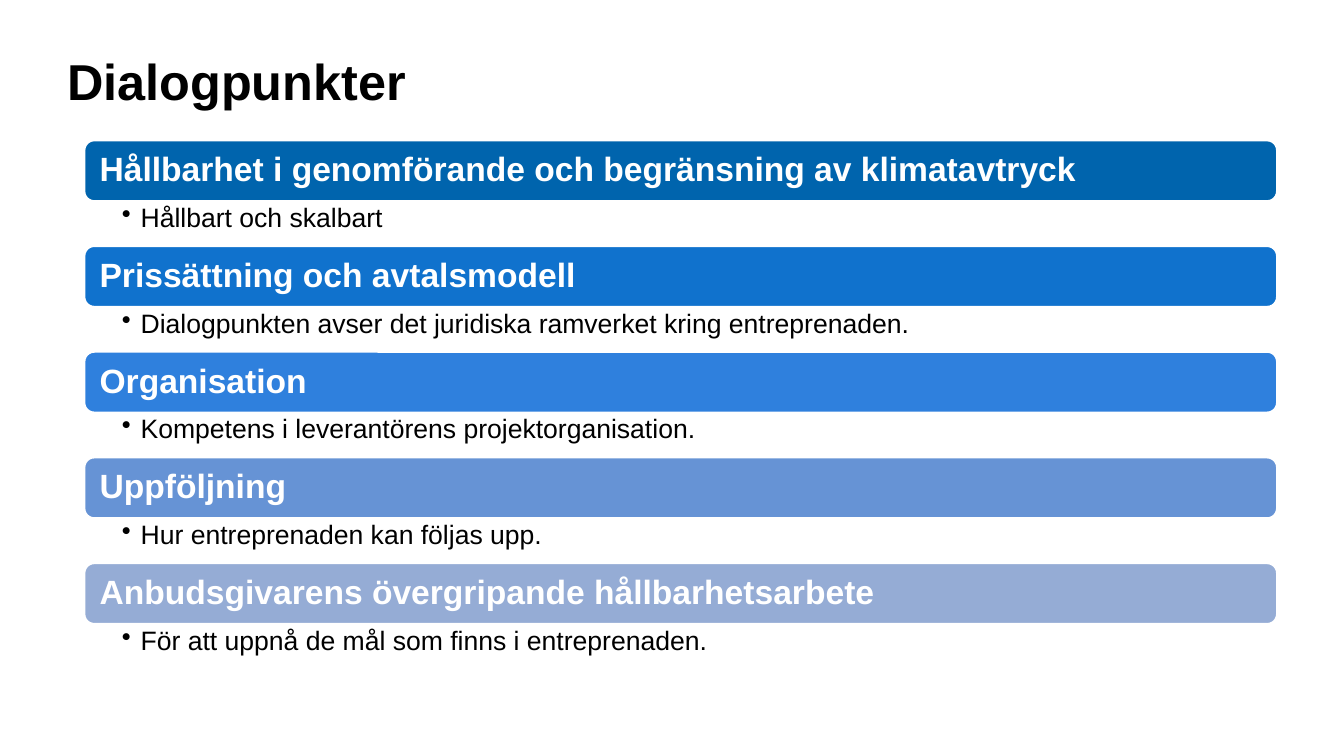
from lxml import etree
from pptx import Presentation
from pptx.dml.color import RGBColor
from pptx.enum.shapes import MSO_SHAPE
from pptx.enum.text import MSO_ANCHOR, MSO_AUTO_SIZE, PP_ALIGN
from pptx.oxml.ns import qn
from pptx.util import Pt

PX = 6350
SLIDE_WIDTH, SLIDE_HEIGHT = 1920, 1080
TITLE_BOX = (96, 72, 1728, 131)
TOPICS_BOX = (120, 200, 1705, 755)
BAR_HEIGHT = 88

ROUNDED = MSO_SHAPE.ROUNDED_RECTANGLE
TOP, MIDDLE = MSO_ANCHOR.TOP, MSO_ANCHOR.MIDDLE
LEFT = PP_ALIGN.LEFT
NO_AUTOFIT = MSO_AUTO_SIZE.NONE

BLACK = RGBColor(0x00, 0x00, 0x00)
WHITE = RGBColor(0xFF, 0xFF, 0xFF)
DEEP_BLUE = RGBColor(0x00, 0x64, 0xAD)
STRONG_BLUE = RGBColor(0x10, 0x72, 0xCD)
BRIGHT_BLUE = RGBColor(0x2F, 0x80, 0xDD)
SOFT_BLUE = RGBColor(0x66, 0x93, 0xD5)
PALE_BLUE = RGBColor(0x95, 0xAC, 0xD5)

TITLE_FONT = {"name": "Arial", "size": Pt(36), "bold": True}
HEADING_FONT = {"name": "Arial", "size": Pt(24), "bold": True}
POINT_FONT = {"name": "Arial", "size": Pt(19), "bold": False}

TOPICS = [
    ("Hållbarhet i genomförande och begränsning av klimatavtryck",
     "Hållbart och skalbart", DEEP_BLUE),
    ("Prissättning och avtalsmodell",
     "Dialogpunkten avser det juridiska ramverket kring entreprenaden.", STRONG_BLUE),
    ("Organisation",
     "Kompetens i leverantörens projektorganisation.", BRIGHT_BLUE),
    ("Uppföljning",
     "Hur entreprenaden kan följas upp.", SOFT_BLUE),
    ("Anbudsgivarens övergripande hållbarhetsarbete",
     "För att uppnå de mål som finns i entreprenaden.", PALE_BLUE),
]


def to_emu(box):
    """Turn px lengths into EMU."""
    return [length * PX for length in box]


def write_text(shape, text, font, color, margins, anchor, spacing=1.0, bullet_indent=0):
    """Write one formatted paragraph, bulleted when an indent is given."""
    frame = shape.text_frame
    left, top, right, bottom = to_emu(margins)
    frame_format = {"word_wrap": True, "auto_size": NO_AUTOFIT, "vertical_anchor": anchor,
                    "margin_left": left, "margin_top": top,
                    "margin_right": right, "margin_bottom": bottom}
    for name, value in frame_format.items():
        setattr(frame, name, value)
    frame.text = text
    paragraph = frame.paragraphs[0]
    paragraph.alignment = LEFT
    paragraph.line_spacing = spacing
    if bullet_indent:
        properties = paragraph._p.get_or_add_pPr()
        properties.set("marL", str(bullet_indent * PX))
        properties.set("indent", str(-bullet_indent * PX))
        etree.SubElement(properties, qn("a:buChar")).set("char", "•")
    run_font = paragraph.runs[0].font
    for name, value in font.items():
        setattr(run_font, name, value)
    run_font.color.rgb = color


def add_title(slide, box):
    """Place the slide title in its placeholder."""
    title = slide.shapes.title
    title.left, title.top, title.width, title.height = to_emu(box)
    write_text(title, "Dialogpunkter", TITLE_FONT, BLACK, (0, 0, 0, 0), TOP)


def add_topic(slide, box, heading, point, color):
    """Place a coloured heading bar with its bullet point below."""
    left, top, width, height = box
    bar = slide.shapes.add_shape(ROUNDED, *to_emu((left, top, width, BAR_HEIGHT)))
    bar.shadow.inherit = False
    bar.fill.solid()
    bar.fill.fore_color.rgb = color
    bar.line.color.rgb = WHITE
    bar.line.width = Pt(2)
    write_text(bar, heading, HEADING_FONT, WHITE, (18, 14, 18, 14), MIDDLE, 0.9)
    point_box = (left, top + BAR_HEIGHT, width, height - BAR_HEIGHT)
    caption = slide.shapes.add_textbox(*to_emu(point_box))
    write_text(caption, point, POINT_FONT, BLACK, (54, 4, 27, 4), TOP, 0.9, 27)


def add_topics(slide, box):
    """Stack the topics evenly in the box."""
    left, top, width, height = box
    pitch = height // len(TOPICS)
    for row, (heading, point, color) in enumerate(TOPICS):
        add_topic(slide, (left, top + row * pitch, width, pitch), heading, point, color)


def main():
    """Build and save the slide."""
    presentation = Presentation()
    presentation.slide_width, presentation.slide_height = to_emu((SLIDE_WIDTH, SLIDE_HEIGHT))
    slide = presentation.slides.add_slide(presentation.slide_layouts[5])
    add_title(slide, TITLE_BOX)
    add_topics(slide, TOPICS_BOX)
    presentation.save("out.pptx")


if __name__ == "__main__":
    main()
